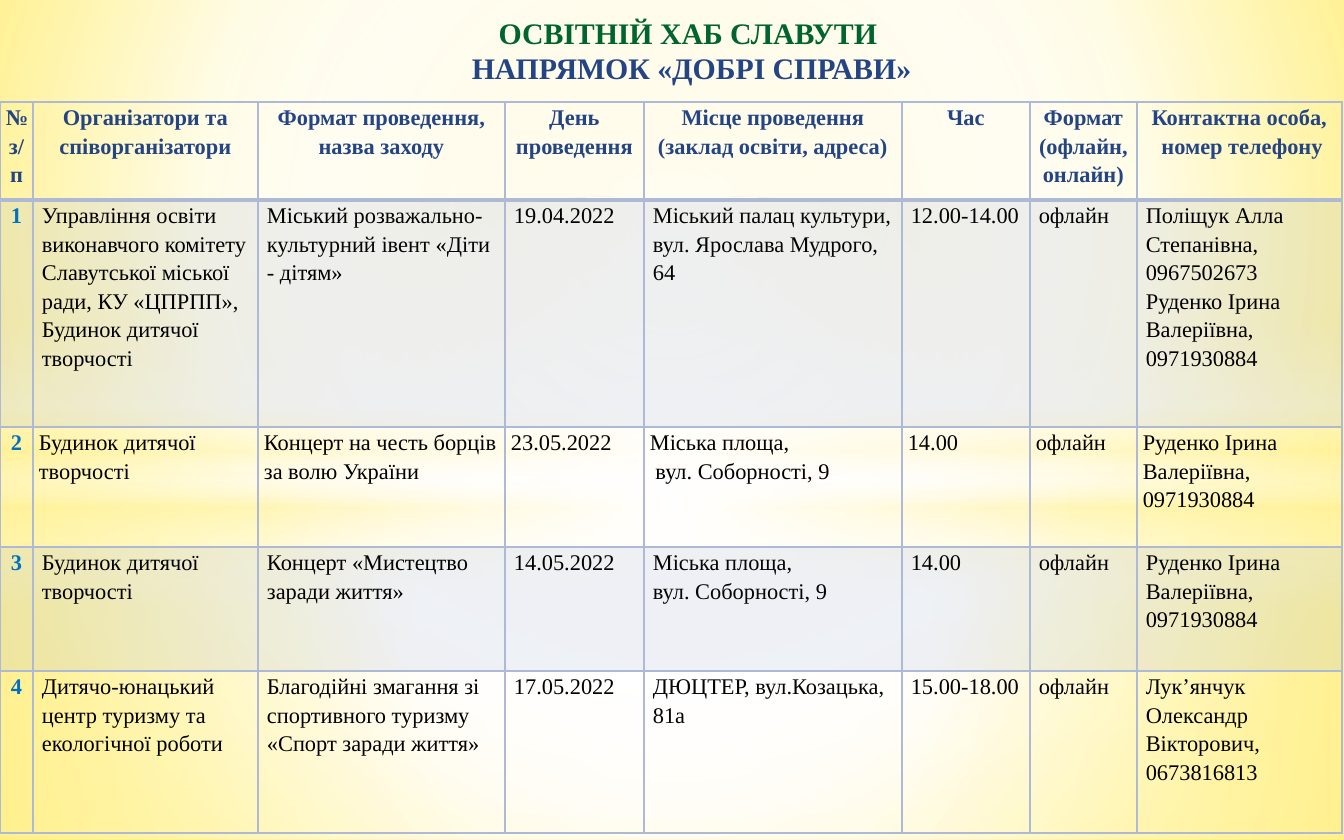
"""Build the timetable slide of the Slavuta education hub."""
from pptx import Presentation
from pptx.dml.color import RGBColor
from pptx.enum.shapes import MSO_SHAPE
from pptx.enum.text import MSO_ANCHOR, MSO_AUTO_SIZE, PP_ALIGN
from pptx.oxml import parse_xml
from pptx.oxml.ns import nsdecls, qn
from pptx.util import Emu, Pt

RECT, OVAL = MSO_SHAPE.RECTANGLE, MSO_SHAPE.OVAL
CENTER, LEFT = PP_ALIGN.CENTER, PP_ALIGN.LEFT
TOP, BOTTOM = MSO_ANCHOR.TOP, MSO_ANCHOR.BOTTOM
NO_AUTOFIT = MSO_AUTO_SIZE.NONE

FONT = "Times New Roman"
GREEN = RGBColor(0x00, 0x64, 0x2D)
NAVY = RGBColor(0x24, 0x45, 0x83)
BLUE = RGBColor(0x00, 0x70, 0xC0)
BLACK = RGBColor(0x00, 0x00, 0x00)
SOFT_BLACK = RGBColor(0x05, 0x05, 0x05)
GRID = RGBColor(0xAE, 0xBA, 0xD5)
WHITE = RGBColor(0xFF, 0xFF, 0xFF)
CREAM = RGBColor(0xFF, 0xF3, 0x9D)
YELLOW = RGBColor(0xFF, 0xF1, 0x8D)
GOLD = RGBColor(0xFF, 0xE9, 0x4E)

SLIDE_SIZE = (1344, 840)
EMU_PER_PX = 914400 / 134.4

TITLE_BOX = (35, -23, 1306, 113)
TITLE = [("ОСВІТНІЙ ХАБ СЛАВУТИ", GREEN), (" НАПРЯМОК «ДОБРІ СПРАВИ»", NAVY)]

BACKDROP = ([(0, YELLOW, 100), (60, WHITE, 100), (100, GOLD, 100)], (20, 10, 20, 60))
MIDDLE = (50, 50, 50, 50)
GLOWS = [
    (RECT, (0, 473, 1344, 367), [(0, WHITE, 91), (37, WHITE, 76), (100, CREAM, 79)], MIDDLE),
    (RECT, (0, 0, 1344, 473), [(0, WHITE, 89), (48, WHITE, 62), (100, CREAM, 79)], MIDDLE),
    (RECT, (0, 325, 1344, 280), [(0, WHITE, 0), (29, WHITE, 30), (45, CREAM, 40),
                                 (55, WHITE, 26), (65, CREAM, 60), (100, WHITE, 0)], None),
    (OVAL, (0, 196, 1344, 625), [(0, WHITE, 100), (54, WHITE, 0)], MIDDLE),
]

TABLE_TOP = 102
COLUMNS = [33, 225, 247, 139, 258, 128, 107, 205]
ROWS = [98, 227, 120, 124, 162]
NARROW, WIDE = 6, 9
NARROW_ROWS = (0, 2)
SHADED_ROWS = (1, 3)

# Text between bars is set in SOFT_BLACK.
EVENTS = [
    ["№\nз/п", "Організатори та співорганізатори", "Формат проведення, назва заходу",
     "День проведення", "Місце проведення\n(заклад освіти, адреса)", "Час",
     "Формат\n(офлайн, онлайн)", "Контактна особа,\n номер телефону"],
    ["1", "Управління освіти виконавчого комітету Славутської міської ради, "
     "КУ «ЦПРПП», Будинок дитячої творчості",
     "Міський |розважально-культурний івент |«Діти - дітям»", "19.04.2022",
     "|Міський палац культури, вул. Ярослава Мудрого, 64|", "12.00-14.00", "офлайн",
     "Поліщук Алла Степанівна, 0967502673\nРуденко Ірина Валеріївна,\n0971930884"],
    ["2", "Будинок дитячої творчості", "Концерт на честь борців за волю України",
     "23.05.2022", "Міська площа,\n вул. Соборності, 9", "14.00", "офлайн",
     "Руденко Ірина Валеріївна,\n0971930884"],
    ["3", "Будинок дитячої творчості", "Концерт «Мистецтво заради життя»",
     "14.05.2022", "|Міська площа,|\n|вул. Соборності, 9|", "14.00", "офлайн",
     "Руденко Ірина Валеріївна,\n0971930884"],
    ["4", "Дитячо-юнацький центр туризму та екологічної роботи",
     "Благодійні змагання зі спортивного туризму «Спорт заради життя»",
     "17.05.2022", "|ДЮЦТЕР, вул.Козацька, 81а|", "15.00-18.00", "офлайн",
     "Лук’янчук Олександр Вікторович,\n0673816813"],
]


def px(length):
    return Emu(round(length * EMU_PER_PX))


def set_gradient(owner, fill, stops, focus):
    fill.background()
    stop_xml = "".join(
        f'<a:gs pos="{pos * 1000}"><a:srgbClr val="{color}">'
        f'<a:alpha val="{opacity * 1000}"/></a:srgbClr></a:gs>'
        for pos, color, opacity in stops)
    if focus:
        sides = " ".join(f'{side}="{part * 1000}"' for side, part in zip("ltrb", focus))
        direction = f'<a:path path="circle"><a:fillToRect {sides}/></a:path>'
    else:
        direction = '<a:lin ang="5400000" scaled="0"/>'
    gradient = parse_xml(f'<a:gradFill {nsdecls("a")} rotWithShape="1">'
                         f'<a:gsLst>{stop_xml}</a:gsLst>{direction}</a:gradFill>')
    empty = owner.find(".//" + qn("a:noFill"))
    empty.getparent().replace(empty, gradient)


def add_run(paragraph, text, size, color, bold):
    run = paragraph.add_run()
    run.text = text
    run.font.name = FONT
    run.font.size = Pt(size)
    run.font.bold = bold
    run.font.color.rgb = color


def set_borders(cell, row):
    properties = cell._tc.get_or_add_tcPr()
    thick = {0: "B", 1: "T"}.get(row)
    for side in "LRTB":
        width = Pt(2 if side == thick else 1)
        properties.append(parse_xml(
            f'<a:ln{side} {nsdecls("a")} w="{width}"><a:solidFill>'
            f'<a:srgbClr val="{GRID}"/></a:solidFill></a:ln{side}>'))


def fill_cell(cell, text, row, column):
    heading = row == 0 or column == 0
    narrow = column == 0 or row in NARROW_ROWS
    cell.margin_left = cell.margin_right = px(NARROW if narrow else WIDE)
    cell.margin_top = cell.margin_bottom = 0
    cell.vertical_anchor = TOP
    main_color = NAVY if row == 0 else BLUE if column == 0 else BLACK
    for number, line in enumerate(text.split("\n")):
        frame = cell.text_frame
        paragraph = frame.add_paragraph() if number else frame.paragraphs[0]
        paragraph.alignment = CENTER if heading else LEFT
        paragraph.line_spacing = 1.15
        for part, words in enumerate(line.split("|")):
            if words:
                add_run(paragraph, words, 12, SOFT_BLACK if part % 2 else main_color, heading)
    set_borders(cell, row)
    if row in SHADED_ROWS:
        cell.fill.solid()
        cell.fill.fore_color.rgb = GRID
        tint = cell._tc.tcPr.find(qn("a:solidFill")).find(qn("a:srgbClr"))
        tint.append(parse_xml(f'<a:alpha {nsdecls("a")} val="20000"/>'))
    else:
        cell.fill.background()


def add_glows(slide):
    for outline, box, stops, focus in GLOWS:
        glow = slide.shapes.add_shape(outline, *map(px, box))
        glow.shadow.inherit = False
        set_gradient(glow._element, glow.fill, stops, focus)
        glow.line.fill.background()


def add_timetable(slide):
    graphic = slide.shapes.add_table(len(ROWS), len(COLUMNS), 0, px(TABLE_TOP),
                                     px(sum(COLUMNS)), px(sum(ROWS)))
    timetable = graphic.table
    timetable.first_row = timetable.horz_banding = False
    for column, width in enumerate(COLUMNS):
        timetable.columns[column].width = px(width)
    for row, (height, texts) in enumerate(zip(ROWS, EVENTS)):
        timetable.rows[row].height = px(height)
        for column, text in enumerate(texts):
            fill_cell(timetable.cell(row, column), text, row, column)


def set_title(slide):
    title = slide.shapes.title
    title.left, title.top, title.width, title.height = map(px, TITLE_BOX)
    frame = title.text_frame
    frame.word_wrap = True
    frame.auto_size = NO_AUTOFIT
    frame.vertical_anchor = BOTTOM
    frame.margin_bottom = px(4)
    for number, (text, color) in enumerate(TITLE):
        paragraph = frame.add_paragraph() if number else frame.paragraphs[0]
        paragraph.alignment = CENTER
        paragraph.space_before = Pt(0)
        add_run(paragraph, text, 16, color, True)
    slide.shapes._spTree.append(title._element)


def main():
    deck = Presentation()
    deck.slide_width, deck.slide_height = map(px, SLIDE_SIZE)
    slide = deck.slides.add_slide(deck.slide_layouts[5])
    set_gradient(slide._element, slide.background.fill, *BACKDROP)
    add_glows(slide)
    add_timetable(slide)
    set_title(slide)
    deck.save("out.pptx")


if __name__ == "__main__":
    main()
